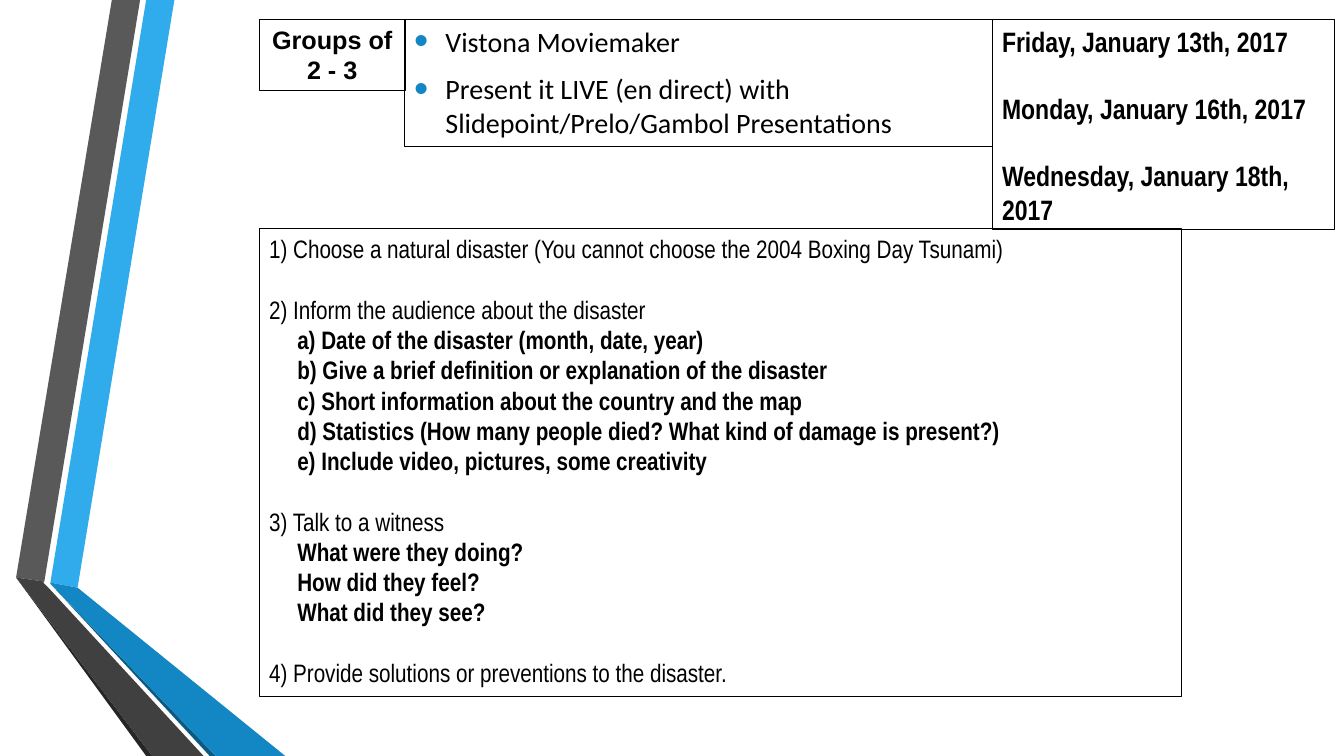
from dataclasses import dataclass

from lxml.etree import SubElement
from pptx import Presentation
from pptx.dml.color import RGBColor as Color
from pptx.enum.shapes import MSO_SHAPE as Form
from pptx.enum.text import MSO_ANCHOR as Anchor
from pptx.enum.text import MSO_AUTO_SIZE as Auto
from pptx.enum.text import PP_ALIGN as Align
from pptx.oxml.ns import qn
from pptx.slide import Slide
from pptx.util import Emu, Pt

SCALE = 9144


@dataclass(frozen=True)
class Theme:
    ink: str = "000000"
    sky: str = "30ACEC"
    blue: str = "1287C3"
    navy: str = "0C5A82"
    grey: str = "595959"
    dark: str = "404040"
    night: str = "262626"
    large: float = 20
    small: float = 18
    edge: float = 0.75
    narrow: str = "Arial Narrow"
    plain: str = "Arial"
    round: str = "Calibri"


THEME = Theme()


@dataclass(frozen=True)
class Band:
    fill: str
    points: tuple[tuple[int, int], ...]


@dataclass(frozen=True)
class Line:
    text: str
    bold: bool = False
    before: float = 0
    after: float = 0
    indent: int = 0
    bullet: bool = False


@dataclass(frozen=True)
class Box:
    left: int
    top: int
    width: int
    height: int
    font: str
    size: float
    lines: tuple[Line, ...]
    align: Align = Align.LEFT


def item(text: str) -> Line:
    return Line(text, bold=True, indent=28)


def step(text: str) -> Line:
    return Line(text, before=21.6)


BANDS = (
    Band(THEME.sky, ((50, 578), (77, 583), (173, 0), (145, 0))),
    Band(THEME.grey, ((139, 0), (111, 0), (16, 573), (44, 577))),
    Band(THEME.night, ((16, 573), (145, 750), (151, 750))),
    Band(THEME.navy, ((50, 579), (208, 750), (214, 750))),
    Band(THEME.blue, ((50, 579), (214, 750), (283, 750), (77, 583), (50, 578))),
    Band(THEME.dark, ((202, 750), (48, 583), (43, 578), (44, 577), (16, 573), (151, 750))),
)

DATES = Box(984, 19, 340, 209, THEME.narrow, THEME.large, (
    Line("Friday, January 13th, 2017", bold=True),
    Line("Monday, January 16th, 2017", bold=True, before=24),
    Line("Wednesday, January 18th, 2017", bold=True, before=24),
))

TOOLS = Box(401, 19, 583, 126, THEME.round, THEME.large, (
    Line("Vistona Moviemaker", after=6, indent=31, bullet=True),
    Line("Present it LIVE (en direct) with Slidepoint/Prelo/Gambol Presentations",
         before=4, after=6, indent=31, bullet=True),
))

TASKS = Box(257, 227, 915, 464, THEME.narrow, THEME.small, (
    Line("1) Choose a natural disaster (You cannot choose the 2004 Boxing Day Tsunami)"),
    step("2) Inform the audience about the disaster"),
    item("a) Date of the disaster (month, date, year)"),
    item("b) Give a brief definition or explanation of the disaster"),
    item("c) Short information about the country and the map"),
    item("d) Statistics (How many people died? What kind of damage is present?)"),
    item("e) Include video, pictures, some creativity"),
    step("3) Talk to a witness"),
    item("What were they doing?"),
    item("How did they feel?"),
    item("What did they see?"),
    step("4) Provide solutions or preventions to the disaster."),
))

GROUPS = Box(257, 19, 145, 71, THEME.plain, THEME.small,
             (Line("Groups of 2 - 3", bold=True),), Align.CENTER)


def px(count: int) -> Emu:
    return Emu(count * SCALE)


def draw_bands(slide: Slide, bands: tuple[Band, ...]) -> None:
    group = slide.shapes.add_group_shape()
    for band in bands:
        start, *rest = band.points
        pen = group.shapes.build_freeform(*start, scale=SCALE)
        pen.add_line_segments(rest, close=True)
        shape = pen.convert_to_shape()
        shape.shadow.inherit = False
        shape.fill.solid()
        shape.fill.fore_color.rgb = Color.from_string(band.fill)
        shape.line.fill.background()


def write_line(para, line: Line, box: Box) -> None:
    para.text = line.text
    para.alignment = box.align
    para.space_before = Pt(line.before)
    para.space_after = Pt(line.after)
    for run in para.runs:
        run.font.name = box.font
        run.font.size = Pt(box.size)
        run.font.bold = line.bold
        run.font.color.rgb = Color.from_string(THEME.ink)
    props = para._p.get_or_add_pPr()
    props.set("marL", str(px(line.indent)))
    if line.bullet:
        props.set("indent", str(-px(line.indent)))
        tint = SubElement(props, qn("a:buClr"))
        SubElement(tint, qn("a:srgbClr"), val=THEME.blue)
        SubElement(props, qn("a:buSzPct"), val="145000")
        SubElement(props, qn("a:buFont"), typeface=THEME.plain)
        SubElement(props, qn("a:buChar"), char="•")


def draw_box(slide: Slide, box: Box) -> None:
    shape = slide.shapes.add_shape(
        Form.RECTANGLE, px(box.left), px(box.top), px(box.width), px(box.height))
    shape.shadow.inherit = False
    shape.fill.background()
    shape.line.color.rgb = Color.from_string(THEME.ink)
    shape.line.width = Pt(THEME.edge)
    frame = shape.text_frame
    frame.word_wrap = True
    frame.auto_size = Auto.SHAPE_TO_FIT_TEXT
    frame.vertical_anchor = Anchor.TOP
    for rank, line in enumerate(box.lines):
        para = frame.add_paragraph() if rank else frame.paragraphs[0]
        write_line(para, line, box)


def main() -> None:
    deck = Presentation()
    deck.slide_width, deck.slide_height = px(1333), px(750)
    slide = deck.slides.add_slide(deck.slide_layouts.get_by_name("Blank"))
    draw_bands(slide, BANDS)
    for box in (DATES, TOOLS, TASKS, GROUPS):
        draw_box(slide, box)
    deck.save("out.pptx")


if __name__ == "__main__":
    main()
